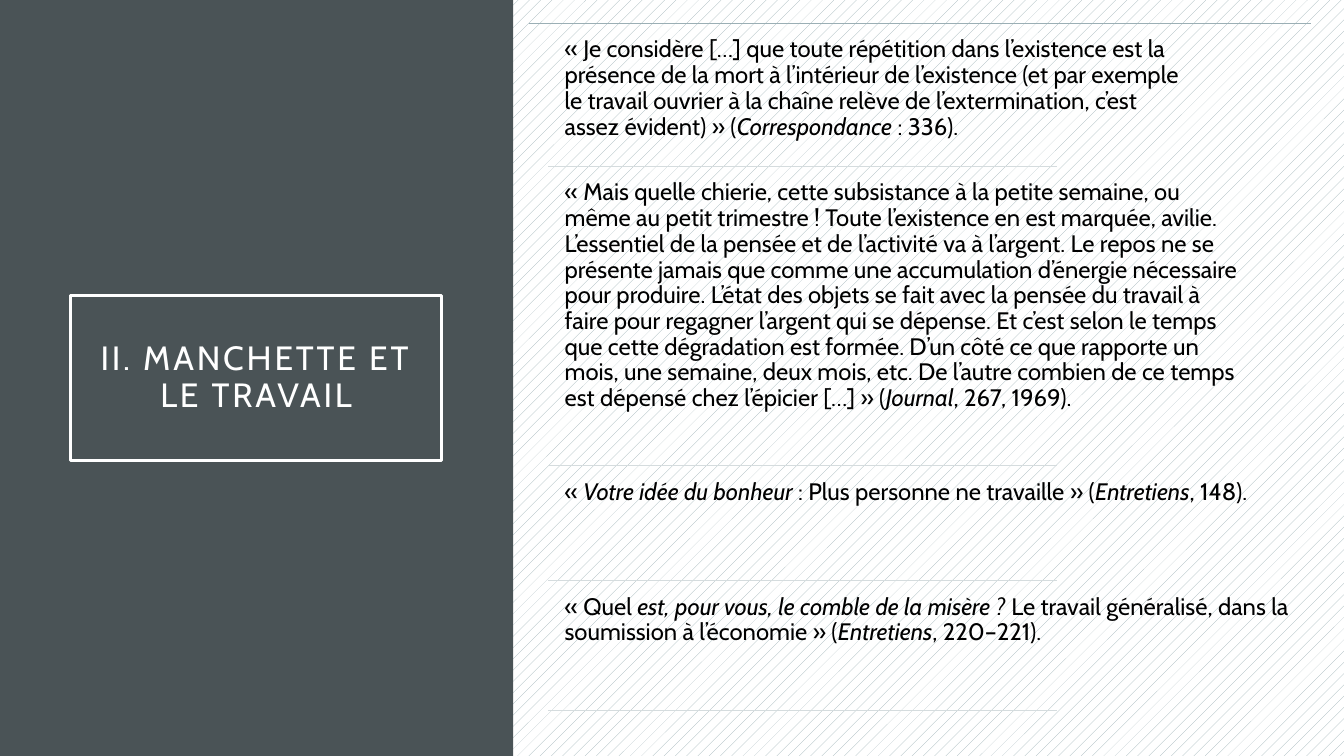
from lxml import etree
from pptx import Presentation
from pptx.dml.color import RGBColor
from pptx.enum.dml import MSO_PATTERN
from pptx.enum.shapes import MSO_CONNECTOR, MSO_SHAPE
from pptx.enum.text import MSO_ANCHOR, PP_ALIGN
from pptx.oxml.ns import qn
from pptx.util import Inches, Pt

RECTANGLE = MSO_SHAPE.RECTANGLE
STRAIGHT = MSO_CONNECTOR.STRAIGHT
DOTTED = MSO_PATTERN.PERCENT_10
TOP, MIDDLE = MSO_ANCHOR.TOP, MSO_ANCHOR.MIDDLE
LEFT, CENTER = PP_ALIGN.LEFT, PP_ALIGN.CENTER

# Each quote: box width, position of the divider below it, text with *italics*
QUOTES = [
    (6.3, 1.65,
     "« Je considère […] que toute répétition dans l’existence est la présence "
     "de la mort à l’intérieur de l’existence (et par exemple le travail ouvrier "
     "à la chaîne relève de l’extermination, c’est assez évident) » "
     "(*Correspondance* : 336)."),
    (6.88, 4.62,
     "« Mais quelle chierie, cette subsistance à la petite semaine, ou même au "
     "petit trimestre ! Toute l’existence en est marquée, avilie. L’essentiel de "
     "la pensée et de l’activité va à l’argent. Le repos ne se présente jamais "
     "que comme une accumulation d’énergie nécessaire pour produire. L’état des "
     "objets se fait avec la pensée du travail à faire pour regagner l’argent "
     "qui se dépense. Et c’est selon le temps que cette dégradation est formée. "
     "D’un côté ce que rapporte un mois, une semaine, deux mois, etc. De l’autre "
     "combien de ce temps est dépensé chez l’épicier […] » "
     "(*Journal*, 267, 1969)."),
    (7.17, 5.76,
     "« *Votre idée du bonheur* : Plus personne ne travaille » "
     "(*Entretiens*, 148)."),
    (7.46, 7.05,
     "« Quel* est, pour vous, le comble de la misère ?* Le travail généralisé, "
     "dans la soumission à l’économie » (*Entretiens*, 220–221)."),
]


def color(value):
    return RGBColor.from_string(value)


class SlideBuilder:
    font = "Cabin"
    slate, mist, pale = "4A5356", "9BAFB5", "D5DCDE"
    white, black = "FFFFFF", "000000"

    def __init__(self, presentation):
        self.slide = presentation.slides.add_slide(presentation.slide_layouts[6])

    def background(self):
        fill = self.slide.background.fill
        fill.patterned()
        fill.pattern = DOTTED
        fill.fore_color.rgb = color(self.mist)
        fill.back_color.rgb = color(self.white)

    def rectangle(self, left, top, width, height, fill=None, line=None):
        shape = self.slide.shapes.add_shape(
            RECTANGLE, Inches(left), Inches(top), Inches(width), Inches(height))
        shape.shadow.inherit = False
        if fill:
            shape.fill.solid()
            shape.fill.fore_color.rgb = color(fill)
        else:
            shape.fill.background()
        if line:
            shape.line.color.rgb = color(line)
            shape.line.width = Pt(2.5)
        else:
            shape.line.fill.background()
        return shape

    def rule(self, left, right, top, line, width):
        connector = self.slide.shapes.add_connector(
            STRAIGHT, Inches(left), Inches(top), Inches(right), Inches(top))
        connector.line.color.rgb = color(line)
        connector.line.width = Pt(width)
        etree.SubElement(connector._element.spPr, qn("a:effectLst"))

    def set_text(self, shape, text, size, ink, inset, anchor=TOP, align=LEFT, spacing=0):
        frame = shape.text_frame
        frame.word_wrap = True
        frame.vertical_anchor = anchor
        frame.margin_left = frame.margin_right = Inches(inset)
        frame.margin_top = frame.margin_bottom = Inches(inset)
        paragraph = frame.paragraphs[0]
        paragraph.alignment = align
        paragraph.line_spacing = 0.9
        paragraph.font.name = self.font
        paragraph.font.size = Pt(size)
        paragraph.font.color.rgb = color(ink)
        for index, part in enumerate(text.split("*")):
            run = paragraph.add_run()
            run.text = part
            if index % 2:
                run.font.italic = True
            if spacing:
                run._r.get_or_add_rPr().set("spc", str(spacing * 100))

    def title(self, text):
        box = self.rectangle(0.7, 2.93, 3.68, 1.64, line=self.white)
        self.set_text(box, text, 24, self.white, 0.2, MIDDLE, CENTER, spacing=2)

    def quote(self, top, bottom, width, text):
        box = self.slide.shapes.add_textbox(
            Inches(5.53), Inches(top), Inches(width), Inches(bottom - top))
        self.set_text(box, text, 17, self.black, 0.07)


def main():
    presentation = Presentation()
    presentation.slide_width = Inches(13.33)
    presentation.slide_height = Inches(7.5)
    builder = SlideBuilder(presentation)
    builder.background()

    # Left panel with the framed title
    builder.rectangle(0, 0, 5.09, 7.5, fill=builder.slate)
    builder.title("II. MANCHETTE ET LE TRAVAIL")

    # Quotes, each closed by a divider
    divider, gap = 0.23, 0.07
    builder.rule(5.25, 13, divider, builder.mist, 0.5)
    for width, next_divider, text in QUOTES:
        builder.quote(divider + gap, next_divider, width, text)
        builder.rule(5.44, 10.48, next_divider, builder.pale, 1)
        divider = next_divider

    presentation.save("out.pptx")


if __name__ == "__main__":
    main()
